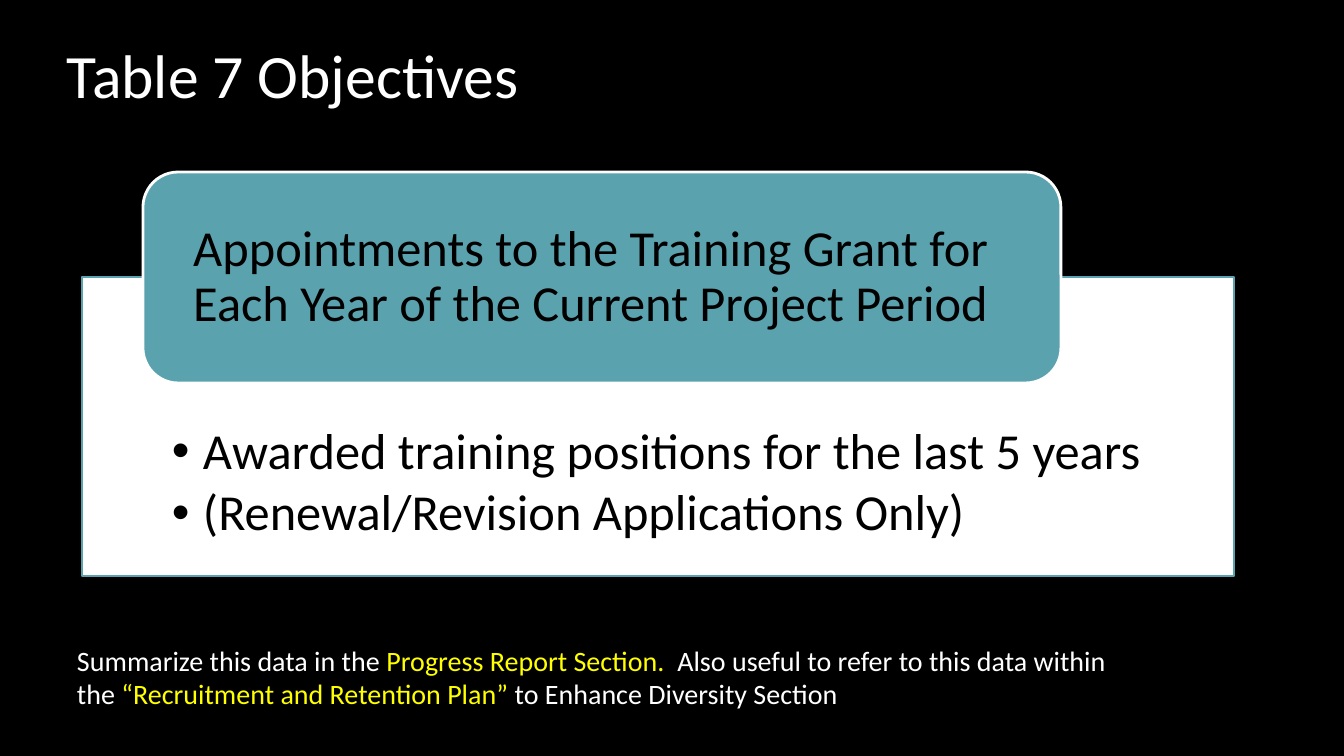
from dataclasses import dataclass

from lxml.etree import SubElement
from pptx import Presentation
from pptx.dml.color import RGBColor
from pptx.enum.shapes import MSO_SHAPE as Kind
from pptx.enum.text import MSO_ANCHOR as Anchor, PP_ALIGN as Align
from pptx.oxml.ns import qn
from pptx.util import Emu, Pt

SCALE = 914400 / 100.8
FONT = "Calibri"
WHITE, BLACK, TEAL, GOLD = "FFFFFF", "000000", "5AA2AE", "FFFF00"


@dataclass(frozen=True)
class Run:
    text: str
    color: str


@dataclass(frozen=True)
class Block:
    box: tuple[int, int, int, int]
    inset: tuple[int, int, int, int]
    size: int
    lines: tuple[tuple[Run, ...], ...]
    anchor: Anchor = Anchor.TOP
    pitch: float | Pt = 1.0
    after: int = 0
    bullet: bool = False
    kind: Kind | None = None
    fill: str = WHITE
    edge: str = WHITE


BLOCKS = (
    Block((67, 5, 1210, 106), (0, 0, 0, 0), 44,
          ((Run("Table 7 Objectives", WHITE),),),
          anchor=Anchor.BOTTOM, pitch=Pt(28)),
    Block((67, 638, 1067, 78), (10, 5, 10, 5), 20,
          ((Run("Summarize this data in the ", WHITE),
            Run("Progress Report Section.  ", GOLD),
            Run("Also useful to refer to this data within the ", WHITE),
            Run("“Recruitment and Retention Plan” ", GOLD),
            Run("to Enhance Diversity Section", WHITE)),)),
    Block((82, 277, 1152, 299), (90, 149, 90, 28), 36,
          ((Run("Awarded training positions for the last 5 years", BLACK),),
           (Run("(Renewal/Revision Applications Only)", BLACK),)),
          pitch=0.9, after=5, bullet=True, kind=Kind.RECTANGLE, edge=TEAL),
    Block((143, 172, 918, 211), (40, 10, 40, 10), 36,
          ((Run("Appointments to the Training Grant for Each Year "
                "of the Current Project Period", BLACK),),),
          anchor=Anchor.MIDDLE, pitch=0.9, kind=Kind.ROUNDED_RECTANGLE, fill=TEAL),
)


def px(n: int) -> Emu:
    return Emu(round(n * SCALE))


def rgb(code: str) -> RGBColor:
    return RGBColor.from_string(code)


def mark(para) -> None:
    props = para._p.get_or_add_pPr()
    props.set("marL", str(px(31)))
    props.set("indent", str(px(-31)))
    SubElement(props, qn("a:buFont")).set("typeface", "Arial")
    SubElement(props, qn("a:buChar")).set("char", "•")


def write(frame, block: Block) -> None:
    frame.word_wrap = True
    frame.vertical_anchor = block.anchor
    (frame.margin_left, frame.margin_top,
     frame.margin_right, frame.margin_bottom) = map(px, block.inset)
    for i, line in enumerate(block.lines):
        para = frame.add_paragraph() if i else frame.paragraphs[0]
        para.alignment = Align.LEFT
        para.line_spacing = block.pitch
        para.space_after = Pt(block.after)
        if block.bullet:
            para.level = 1
            mark(para)
        for item in line:
            run = para.add_run()
            run.text = item.text
            run.font.name = FONT
            run.font.size = Pt(block.size)
            run.font.color.rgb = rgb(item.color)


def draw(slide, block: Block) -> None:
    box = tuple(map(px, block.box))
    if block.kind is None:
        shape = slide.shapes.add_textbox(*box)
    else:
        shape = slide.shapes.add_shape(block.kind, *box)
        shape.shadow.inherit = False
        shape.fill.solid()
        shape.fill.fore_color.rgb = rgb(block.fill)
        shape.line.color.rgb = rgb(block.edge)
        shape.line.width = Pt(2)
    write(shape.text_frame, block)


def main() -> None:
    deck = Presentation()
    deck.slide_width, deck.slide_height = px(1344), px(756)
    slide = deck.slides.add_slide(deck.slide_layouts[6])
    back = slide.background.fill
    back.solid()
    back.fore_color.rgb = rgb(BLACK)
    for block in BLOCKS:
        draw(slide, block)
    deck.save("out.pptx")


if __name__ == "__main__":
    main()
